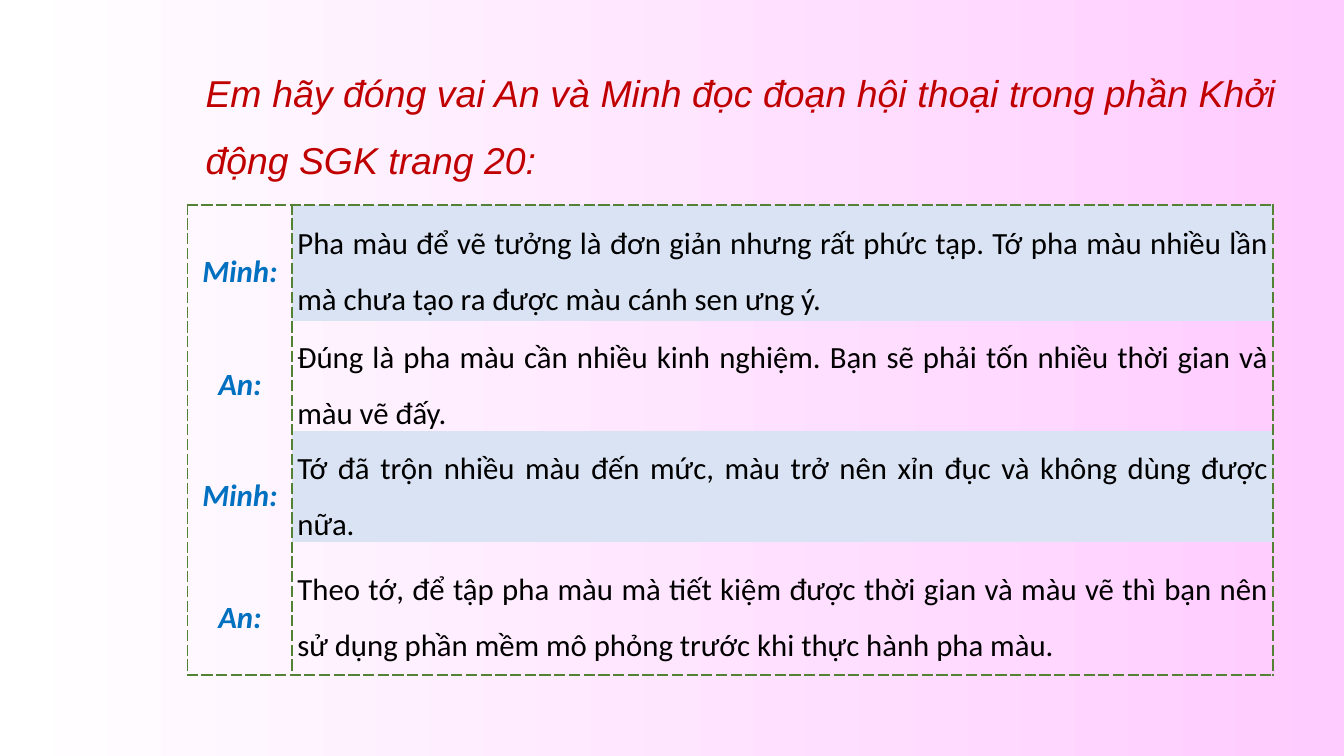
from lxml.etree import SubElement
from pptx import Presentation
from pptx.dml.color import RGBColor
from pptx.enum.text import MSO_ANCHOR, PP_ALIGN
from pptx.oxml.ns import qn
from pptx.util import Inches, Pt

COLORS = {
    "white": "FFFFFF",
    "pink": "FFCCFF",
    "title": "C00000",
    "speaker": "0070C0",
    "speech": "000000",
    "band": "DAE3F3",
    "border": "548235",
}
PLAIN_TABLE_STYLE = "{2D5ABB26-0587-4C30-8999-92F81FD0307C}"
TITLE = "Em hãy đóng vai An và Minh đọc đoạn hội thoại trong phần Khởi động SGK trang 20:"
DIALOGUE = [
    ("Minh:", "Pha màu để vẽ tưởng là đơn giản nhưng rất phức tạp. Tớ pha màu "
              "nhiều lần mà chưa tạo ra được màu cánh sen ưng ý."),
    ("An:", "Đúng là pha màu cần nhiều kinh nghiệm. Bạn sẽ phải tốn nhiều thời "
            "gian và màu vẽ đấy."),
    ("Minh:", "Tớ đã trộn nhiều màu đến mức, màu trở nên xỉn đục và không dùng "
              "được nữa."),
    ("An:", "Theo tớ, để tập pha màu mà tiết kiệm được thời gian và màu vẽ thì "
            "bạn nên sử dụng phần mềm mô phỏng trước khi thực hành pha màu."),
]
COLUMN_WIDTHS = [1.04, 9.73]
ROW_HEIGHTS = [1.15, 1.04, 1.04, 1.32]


def rgb(name):
    return RGBColor.from_string(COLORS[name])


def set_background(slide):
    fill = slide.background.fill
    fill.gradient()
    fill.gradient_angle = 0
    for stop, position, name in zip(fill.gradient_stops, (0, 1), ("white", "pink")):
        stop.position = position
        stop.color.rgb = rgb(name)


def write_text(text_frame, text, font_name, size, color, alignment, bold=False, italic=False):
    text_frame.text = text
    paragraph = text_frame.paragraphs[0]
    paragraph.alignment = alignment
    paragraph.line_spacing = 1.5
    font = paragraph.runs[0].font
    font.name = font_name
    font.size = Pt(size)
    font.bold = bold
    font.italic = italic
    font.color.rgb = rgb(color)
    return paragraph


def add_title(slide):
    box = slide.shapes.add_textbox(Inches(1.94), Inches(0.42), Inches(10.83), Inches(1.45))
    box.text_frame.word_wrap = True
    write_text(box.text_frame, TITLE, "Arial", 26.7, "title", PP_ALIGN.JUSTIFY, italic=True)


def add_dashed_borders(cell, sides):
    """Draw the given sides, listed in schema order L, R, T, B."""
    properties = cell._tc.get_or_add_tcPr()
    for side in sides:
        line = SubElement(properties, qn(f"a:ln{side}"), w=str(Pt(1.5)))
        fill = SubElement(line, qn("a:solidFill"))
        SubElement(fill, qn("a:srgbClr"), val=COLORS["border"])
        SubElement(line, qn("a:prstDash"), val="sysDash")


def fill_cell(cell, text, is_speaker, sides, banded):
    cell.margin_left = cell.margin_right = Inches(0.05)
    cell.margin_top = cell.margin_bottom = 0
    cell.vertical_anchor = MSO_ANCHOR.MIDDLE
    paragraph = write_text(
        cell.text_frame, text, "Calibri", 22,
        "speaker" if is_speaker else "speech",
        PP_ALIGN.CENTER if is_speaker else PP_ALIGN.JUSTIFY,
        bold=is_speaker, italic=is_speaker)
    paragraph.space_after = Pt(8)
    add_dashed_borders(cell, sides)
    if banded:
        cell.fill.solid()
        cell.fill.fore_color.rgb = rgb("band")
    else:
        cell.fill.background()


def add_dialogue_table(slide):
    frame = slide.shapes.add_table(
        len(DIALOGUE), len(COLUMN_WIDTHS), Inches(1.86), Inches(2.03),
        Inches(sum(COLUMN_WIDTHS)), Inches(sum(ROW_HEIGHTS)))
    table = frame.table
    table.first_row = table.horz_banding = False
    table._tbl.tblPr.find(qn("a:tableStyleId")).text = PLAIN_TABLE_STYLE
    for column, width in zip(table.columns, COLUMN_WIDTHS):
        column.width = Inches(width)
    for row, height in zip(table.rows, ROW_HEIGHTS):
        row.height = Inches(height)
    last_row = len(DIALOGUE) - 1
    for row_index, texts in enumerate(DIALOGUE):
        sides = "LR" + {0: "T", last_row: "B"}.get(row_index, "")
        for column_index, text in enumerate(texts):
            is_speaker = column_index == 0
            banded = not is_speaker and row_index % 2 == 0
            fill_cell(table.cell(row_index, column_index), text, is_speaker, sides, banded)


def main():
    presentation = Presentation()
    presentation.slide_width = Inches(13.33)
    presentation.slide_height = Inches(7.5)
    slide = presentation.slides.add_slide(presentation.slide_layouts[6])
    set_background(slide)
    add_title(slide)
    add_dialogue_table(slide)
    presentation.save("out.pptx")


if __name__ == "__main__":
    main()
